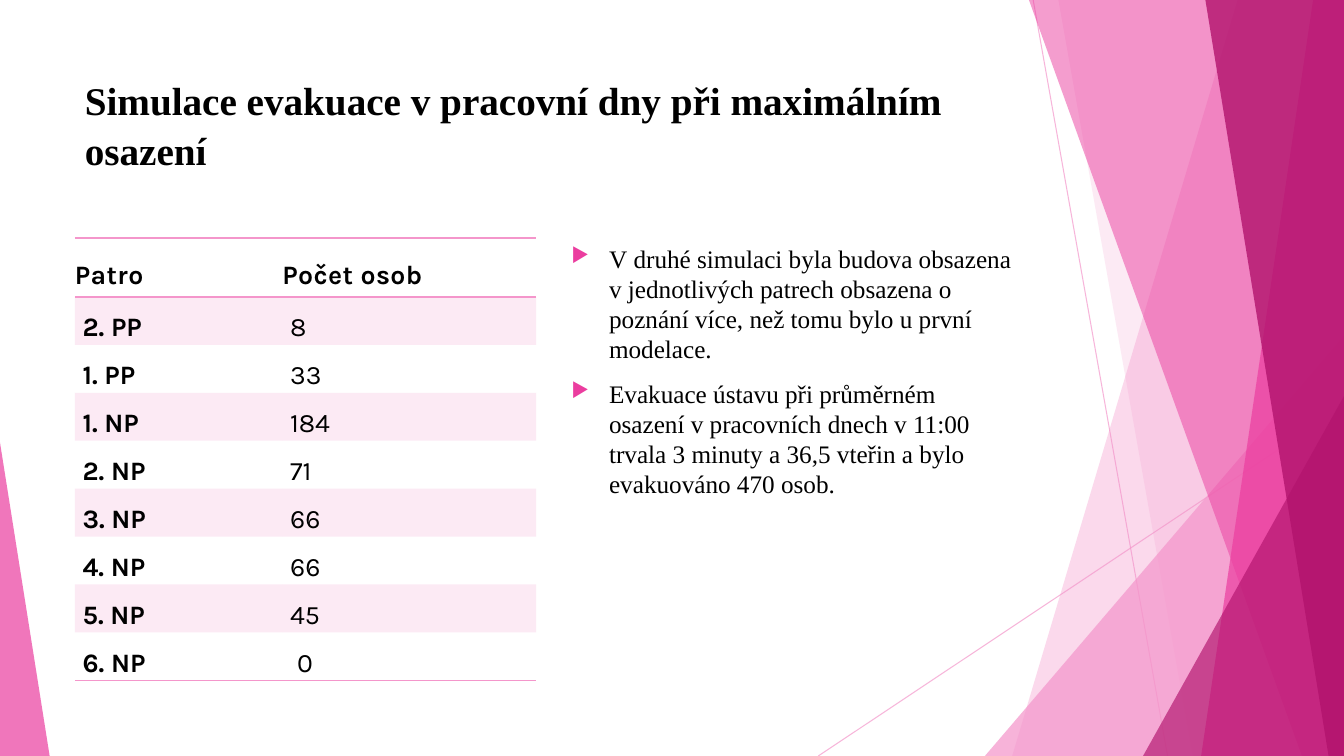
import pptx
import pptx.util
import pptx.dml.color
import pptx.enum.shapes
import pptx.enum.text
import pptx.oxml
import pptx.oxml.ns
from dataclasses import dataclass
from lxml import etree

Pt = pptx.util.Pt
qn = pptx.oxml.ns.qn


@dataclass(frozen=True)
class Theme:
    light: str = "F496CB"
    accent: str = "EB3D9F"
    dark: str = "B2136D"
    text: str = "000000"
    serif: str = "Times New Roman"
    sans: str = "Karla"
    title_size: int = 28
    body_size: int = 18
    table_size: int = 19


@dataclass(frozen=True)
class Box:
    left: float
    top: float
    width: float
    height: float

    def lengths(self):
        return Pt(self.left), Pt(self.top), Pt(self.width), Pt(self.height)


THEME = Theme()
PAGE = Box(0, 0, 960, 540)
TITLE_BOX = Box(53.5, 48.5, 709, 103.5)
TABLE_BOX = Box(53.5, 170, 329.5, 308.6)
BODY_BOX = Box(401, 170, 329.5, 305)

TITLE = "Simulace evakuace v\u00a0pracovní dny při maximálním osazení"
HEADER = ("Patro", "Počet osob")
FLOORS = [
    ("2. PP", "8"), ("1. PP", "33"), ("1. NP", "184"), ("2. NP", "71"),
    ("3. NP", "66"), ("4. NP", "66"), ("5. NP", "45"), ("6. NP", "0"),
]
FINDINGS = [
    "V\u00a0druhé simulaci byla budova obsazena v\u00a0jednotlivých patrech obsazena "
    "o poznání více, než tomu bylo u první modelace.",
    "Evakuace ústavu při průměrném osazení v\u00a0pracovních dnech v\u00a011:00 "
    "trvala 3 minuty a 36,5 vteřin a bylo evakuováno 470 osob.",
]


def rgb(color):
    return pptx.dml.color.RGBColor.from_string(color)


def set_solid(fill, color, opacity):
    fill.solid()
    fill.fore_color.rgb = rgb(color)
    for element in fill._xPr.iter(qn("a:srgbClr")):
        etree.SubElement(element, qn("a:alpha"), val=str(opacity * 1000))


def set_font(paragraph, name, size, bold=False):
    paragraph.font.name = name
    paragraph.font.size = Pt(size)
    paragraph.font.bold = bold
    paragraph.font.color.rgb = rgb(THEME.text)


def style_facet(shape, color, opacity):
    shape.shadow.inherit = False
    set_solid(shape.fill, color, opacity)
    shape.line.fill.background()


def add_ray(slide, box, start, end):
    ray = slide.shapes.add_connector(
        pptx.enum.shapes.MSO_CONNECTOR.STRAIGHT,
        Pt(box.left + start[0]), Pt(box.top + start[1]),
        Pt(box.left + end[0]), Pt(box.top + end[1]))
    ray.line.width = Pt(0.75)
    set_solid(ray.line.fill, THEME.light, 70)
    etree.SubElement(ray._element.spPr, qn("a:effectLst"))


def add_band(slide, box, top_x, bottom_x, color, opacity):
    right, bottom = box.left + box.width, box.top + box.height
    builder = slide.shapes.build_freeform(box.left + top_x, box.top, scale=Pt(1))
    builder.add_line_segments(
        [(right, box.top), (right, bottom), (box.left + bottom_x, bottom)], close=True)
    style_facet(builder.convert_to_shape(), color, opacity)


def add_corner(slide, box, left, width, height, apex, color, opacity):
    corner = slide.shapes.add_shape(
        pptx.enum.shapes.MSO_SHAPE.ISOSCELES_TRIANGLE,
        Pt(box.left + left), Pt(box.top + box.height - height), Pt(width), Pt(height))
    corner.adjustments[0] = apex
    style_facet(corner, color, opacity)


def add_decoration(slide, box):
    add_ray(slide, box, (738, 0), (834, box.height))
    add_ray(slide, box, (box.width, 290), (584.5, box.height))
    add_band(slide, box, 884, 723, THEME.light, 36)
    add_band(slide, box, 756, 852, THEME.light, 20)
    add_corner(slide, box, 703.5, 256.5, 300, 1, THEME.light, 72)
    add_band(slide, box, 735, 929.5, THEME.accent, 50)
    add_band(slide, box, 938, 858, THEME.accent, 70)
    add_band(slide, box, 861, 949, THEME.dark, 80)
    add_corner(slide, box, 816.5, 143.5, 257, 1, THEME.dark, 66)
    add_corner(slide, box, 0, 35.5, 224, 0, THEME.accent, 70)


def add_text_frame(slide, box):
    frame = slide.shapes.add_textbox(*box.lengths()).text_frame
    frame.word_wrap = True
    return frame


def add_title(slide, box):
    paragraph = add_text_frame(slide, box).paragraphs[0]
    paragraph.text = TITLE
    paragraph.line_spacing = 1.07
    paragraph.space_after = Pt(15.7)
    set_font(paragraph, THEME.serif, THEME.title_size, True)


def add_findings(slide, box):
    frame = add_text_frame(slide, box)
    for index, finding in enumerate(FINDINGS):
        paragraph = frame.add_paragraph() if index else frame.paragraphs[0]
        paragraph.text = finding
        if index:
            paragraph.space_before = Pt(10)
        properties = paragraph._p.get_or_add_pPr()
        properties.set("marL", str(Pt(27)))
        properties.set("indent", str(-Pt(27)))
        color = etree.SubElement(properties, qn("a:buClr"))
        etree.SubElement(color, qn("a:srgbClr"), val=THEME.accent)
        etree.SubElement(properties, qn("a:buSzPct"), val="80000")
        etree.SubElement(properties, qn("a:buChar"), char="▶")
        set_font(paragraph, THEME.serif, THEME.body_size)


def add_cell_border(cell, side, position):
    border = etree.Element(qn(f"a:{side}"), w=str(Pt(1)))
    fill = etree.SubElement(border, qn("a:solidFill"))
    etree.SubElement(fill, qn("a:srgbClr"), val=THEME.light)
    cell._tc.get_or_add_tcPr().insert(position, border)


def fill_cell(cell, text, bold, left_margin, right_margin):
    cell.margin_left, cell.margin_right = Pt(left_margin), Pt(right_margin)
    cell.margin_top = cell.margin_bottom = 0
    paragraph = cell.text_frame.paragraphs[0]
    paragraph.text = text
    paragraph.alignment = pptx.enum.text.PP_ALIGN.JUSTIFY
    paragraph.line_spacing = 1.5
    paragraph.space_after = Pt(6)
    set_font(paragraph, THEME.sans, THEME.table_size, bold)


def add_floor_table(slide, box):
    rows = [HEADER, *FLOORS]
    header_height = 42.2
    row_height = (box.height - header_height) / len(FLOORS)
    table = slide.shapes.add_table(len(rows), len(HEADER), *box.lengths()).table
    table.first_row = table.horz_banding = False
    style = table._tbl.tblPr.find(qn("a:tableStyleId"))
    style.text = "{2D5ABB26-0587-4C30-8999-92F81FD0307C}"
    for column, share in zip(table.columns, (0.45, 0.55)):
        column.width = Pt(box.width * share)
    for row_index, values in enumerate(rows):
        is_header = row_index == 0
        table.rows[row_index].height = Pt(header_height if is_header else row_height)
        for column_index, text in enumerate(values):
            cell = table.cell(row_index, column_index)
            left_margin = 0 if is_header else 10.5 if text == "0" else 5.5
            fill_cell(cell, text, is_header or column_index == 0,
                      left_margin, 1.5 if is_header else 8)
            if row_index % 2:
                set_solid(cell.fill, THEME.light, 20)
            else:
                cell.fill.background()
            if is_header:
                cell.vertical_anchor = pptx.enum.text.MSO_ANCHOR.MIDDLE
                for run in cell.text_frame.paragraphs[0].runs:
                    run.font._element.set("spc", "30")
                add_cell_border(cell, "lnT", 0)
                add_cell_border(cell, "lnB", 1)
            elif row_index == len(FLOORS):
                add_cell_border(cell, "lnB", 0)


def main():
    presentation = pptx.Presentation()
    presentation.slide_width, presentation.slide_height = Pt(PAGE.width), Pt(PAGE.height)
    slide = presentation.slides.add_slide(presentation.slide_layouts[6])
    add_decoration(slide, PAGE)
    add_title(slide, TITLE_BOX)
    add_floor_table(slide, TABLE_BOX)
    add_findings(slide, BODY_BOX)
    presentation.save("out.pptx")


if __name__ == "__main__":
    main()
